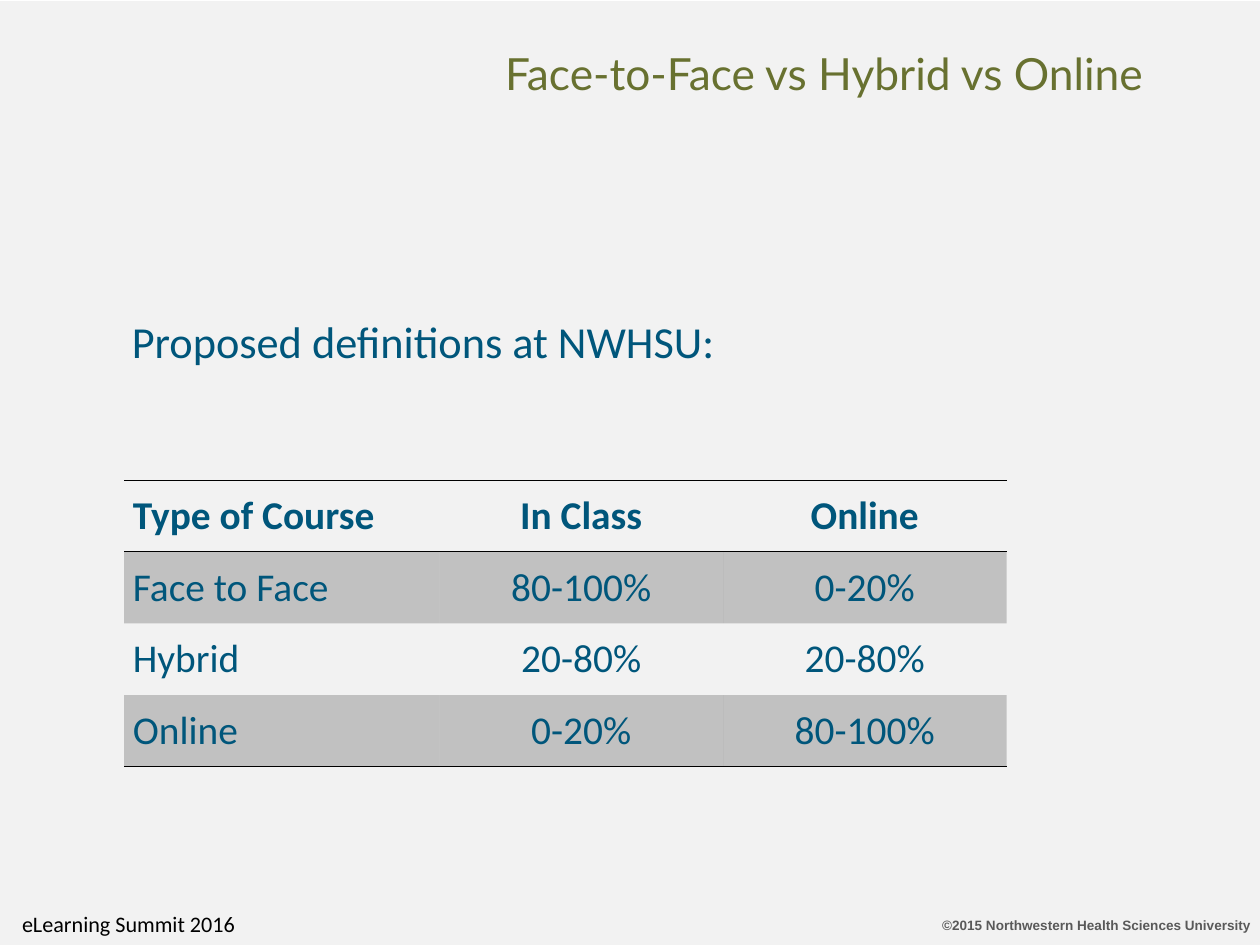
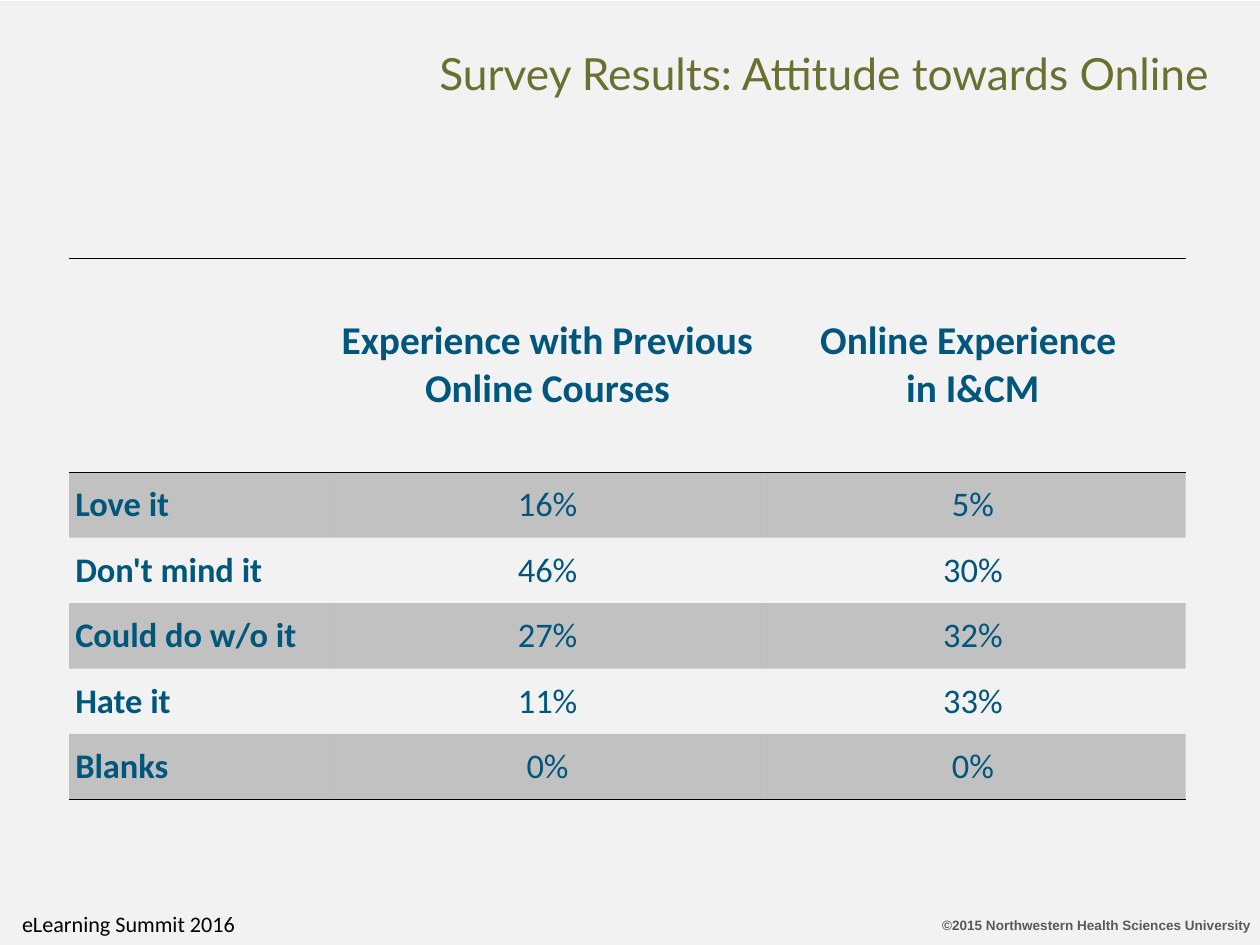
from lxml import etree
from pptx import Presentation
from pptx import util as u
from pptx.dml.color import RGBColor
from pptx.enum import dml, text
from pptx.oxml.ns import qn

GREEN, BLUE, GRAY, BLACK = "687130", "00567B", "595959", "000000"
NO_STYLE = "{2D5ABB26-0587-4C30-8999-92F81FD0307C}"
LEFT, CENTER, RIGHT = text.PP_ALIGN.LEFT, text.PP_ALIGN.CENTER, text.PP_ALIGN.RIGHT


def rgb(value):
    return RGBColor.from_string(value)


def write(frame, content, font, size, color, align=LEFT, bold=False):
    paragraph = frame.paragraphs[0]
    paragraph.alignment = align
    for number, line in enumerate(content.split("\n")):
        if number:
            paragraph.add_line_break()
        run = paragraph.add_run()
        run.text = line
        run.font.name = font
        run.font.size = u.Pt(size)
        run.font.bold = bold
        run.font.color.rgb = rgb(color)


pages = [
    {
        "title": "Face-to-Face vs Hybrid vs Online",
        "intro": "Proposed definitions at NWHSU:",
        "corner": (1.4, 5.42),
        "columns": [3.56, 3.2, 3.2],
        "heights": (0.81, 0.81),
        "margins": (0.1, 0.05),
        "body_size": 32,
        "bold_labels": False,
        "rows": [
            ["Type of Course", "In Class", "Online"],
            ["Face to Face", "80-100%", "0-20%"],
            ["Hybrid", "20-80%", "20-80%"],
            ["Online", "0-20%", "80-100%"],
        ],
    },
    {
        "title": "Survey Results: Attitude towards Online",
        "intro": None,
        "corner": (0.78, 2.92),
        "columns": [3, 4.8, 4.8],
        "heights": (2.41, 0.74),
        "margins": (0.07, 0),
        "body_size": 28,
        "bold_labels": True,
        "rows": [
            ["", "Experience with Previous Online Courses", "Online Experience \nin I&CM"],
            ["Love it", "16%", "5%"],
            ["Don't mind it", "46%", "30%"],
            ["Could do w/o it", "27%", "32%"],
            ["Hate it", "11%", "33%"],
            ["Blanks", "0%", "0%"],
        ],
    },
]

deck = Presentation()
deck.slide_width, deck.slide_height = u.Inches(14.22), u.Inches(10.67)

backdrop = deck.slide_master.background.fill
backdrop.patterned()
backdrop.pattern = dml.MSO_PATTERN.DARK_HORIZONTAL
backdrop.fore_color.rgb = rgb("F2F2F2")
backdrop.back_color.rgb = rgb("FFFFFF")

for page in pages:
    slide = deck.slides.add_slide(deck.slide_layouts[5])

    title = slide.shapes.title
    title.left, title.top = u.Inches(4.61), u.Inches(0.17)
    title.width, title.height = u.Inches(9.38), u.Inches(1)
    title.text_frame.word_wrap = True
    title.text_frame.auto_size = text.MSO_AUTO_SIZE.NONE
    title.text_frame.vertical_anchor = text.MSO_ANCHOR.BOTTOM
    write(title.text_frame, page["title"], "Lato", 36, GREEN, CENTER)

    rights = slide.shapes.add_textbox(
        u.Inches(10.61), u.Inches(10.35), u.Inches(3.51), u.Inches(0.18)).text_frame
    rights.margin_left = rights.margin_right = rights.margin_top = rights.margin_bottom = 0
    rights.vertical_anchor = text.MSO_ANCHOR.MIDDLE
    rights.word_wrap = True
    write(rights, "©2015 Northwestern Health Sciences University", "Arial", 11, GRAY, RIGHT, True)

    event = slide.shapes.add_textbox(
        u.Inches(0.15), u.Inches(10.23), u.Inches(2.88), u.Inches(0.4)).text_frame
    event.word_wrap = True
    write(event, "eLearning Summit 2016", "Calibri", 18, BLACK)

    if page["intro"]:
        intro = slide.shapes.add_textbox(
            u.Inches(1.39), u.Inches(3.5), u.Inches(11.44), u.Inches(0.75)).text_frame
        intro.word_wrap = True
        write(intro, page["intro"], "Calibri", 36, BLUE)

    rows, columns = page["rows"], page["columns"]
    header_height, body_height = page["heights"]
    left, top = page["corner"]
    side, edge = page["margins"]
    height = header_height + body_height * (len(rows) - 1)
    grid = slide.shapes.add_table(
        len(rows), len(columns), u.Inches(left), u.Inches(top),
        u.Inches(sum(columns)), u.Inches(height)).table
    grid.horz_banding = False
    grid._tbl.tblPr.find(qn("a:tableStyleId")).text = NO_STYLE
    for column, width in zip(grid.columns, columns):
        column.width = u.Inches(width)

    for r, values in enumerate(rows):
        header = r == 0
        grid.rows[r].height = u.Inches(header_height if header else body_height)
        ruled = ["a:lnT", "a:lnB"] if header else ["a:lnB"] if r == len(rows) - 1 else []
        for c, value in enumerate(values):
            cell = grid.cell(r, c)
            cell.vertical_anchor = text.MSO_ANCHOR.MIDDLE
            cell.margin_left = cell.margin_right = u.Inches(side)
            cell.margin_top = cell.margin_bottom = u.Inches(edge)
            if value:
                write(cell.text_frame, value, "Calibri", 32 if header else page["body_size"],
                      BLUE, CENTER if c else LEFT,
                      header or (c == 0 and page["bold_labels"]))

            properties = cell._tc.get_or_add_tcPr()
            for tag in ruled:
                rule = etree.SubElement(properties, qn(tag), w=str(u.Pt(1)))
                ink = etree.SubElement(rule, qn("a:solidFill"))
                etree.SubElement(ink, qn("a:srgbClr"), val=BLACK)
            if r % 2:
                cell.fill.solid()
                cell.fill.fore_color.rgb = rgb(BLACK)
                shade = properties.find(qn("a:solidFill"))[0]
                etree.SubElement(shade, qn("a:alpha"), val="20000")
            else:
                cell.fill.background()

deck.save("out.pptx")
